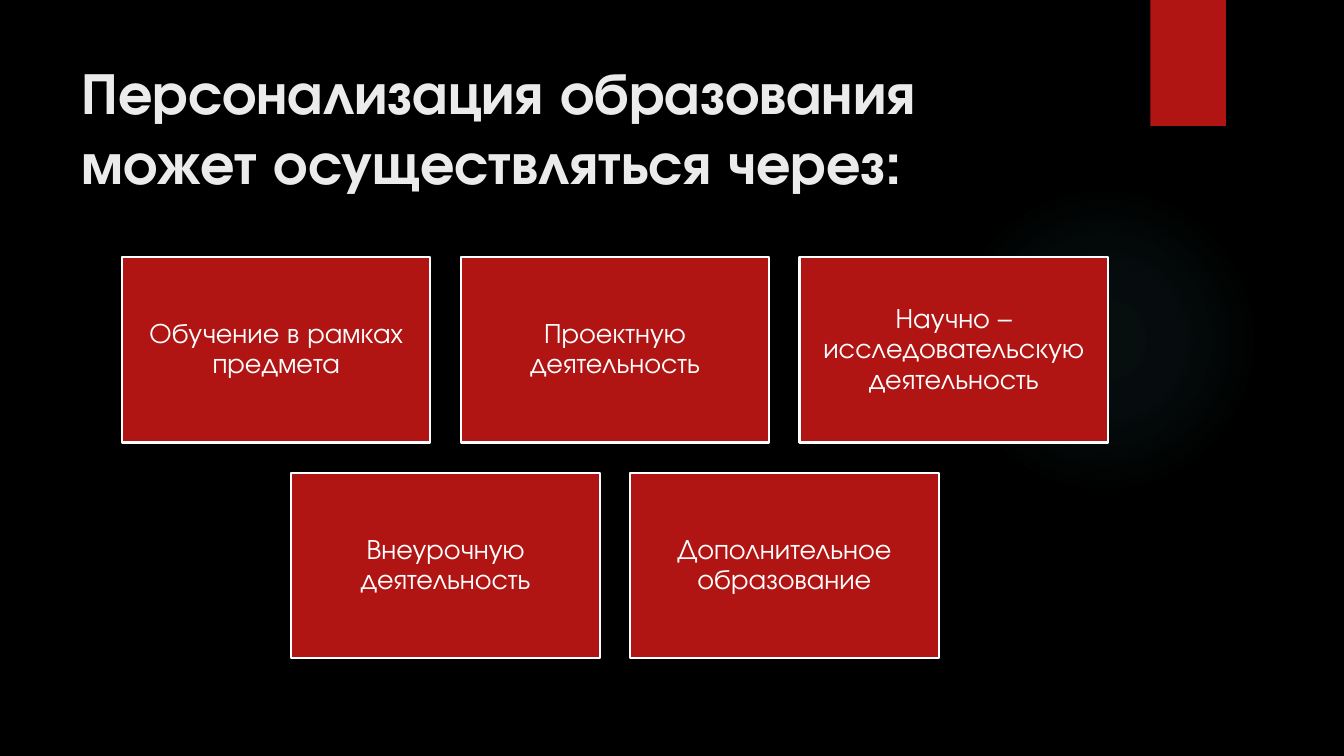
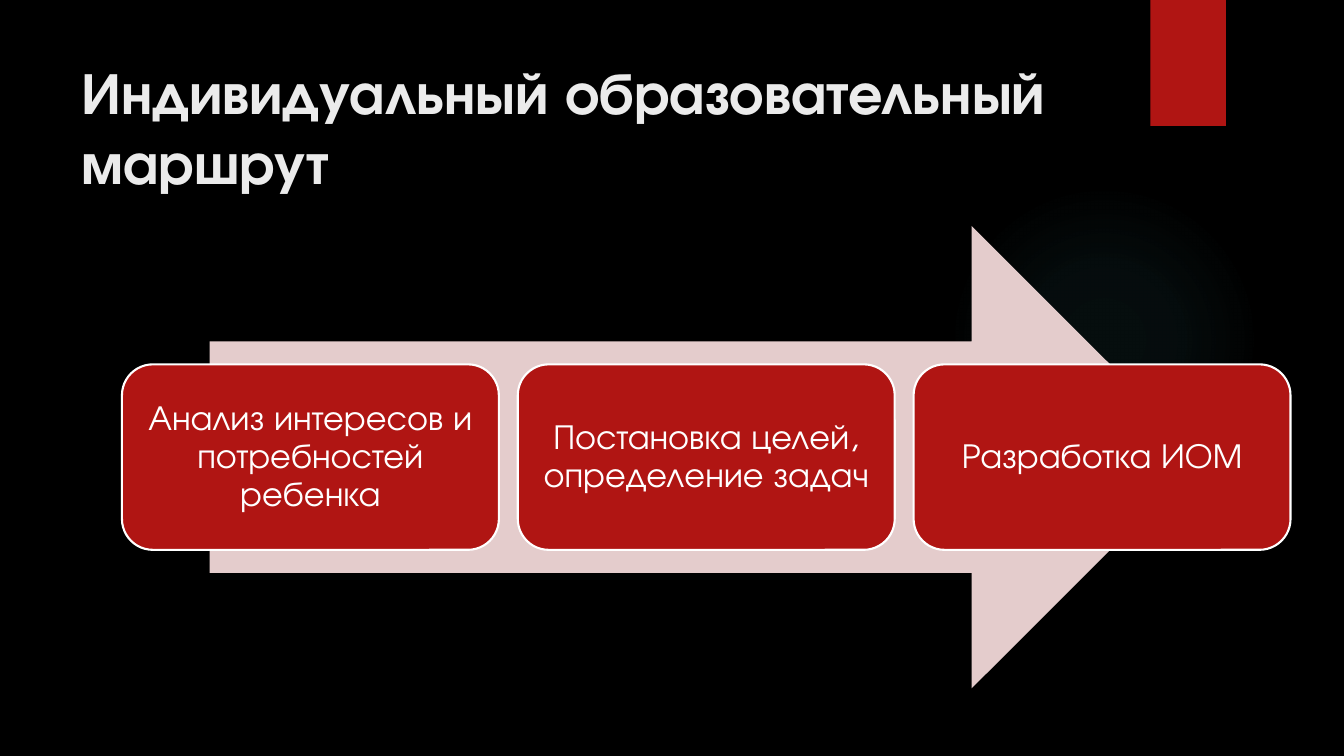
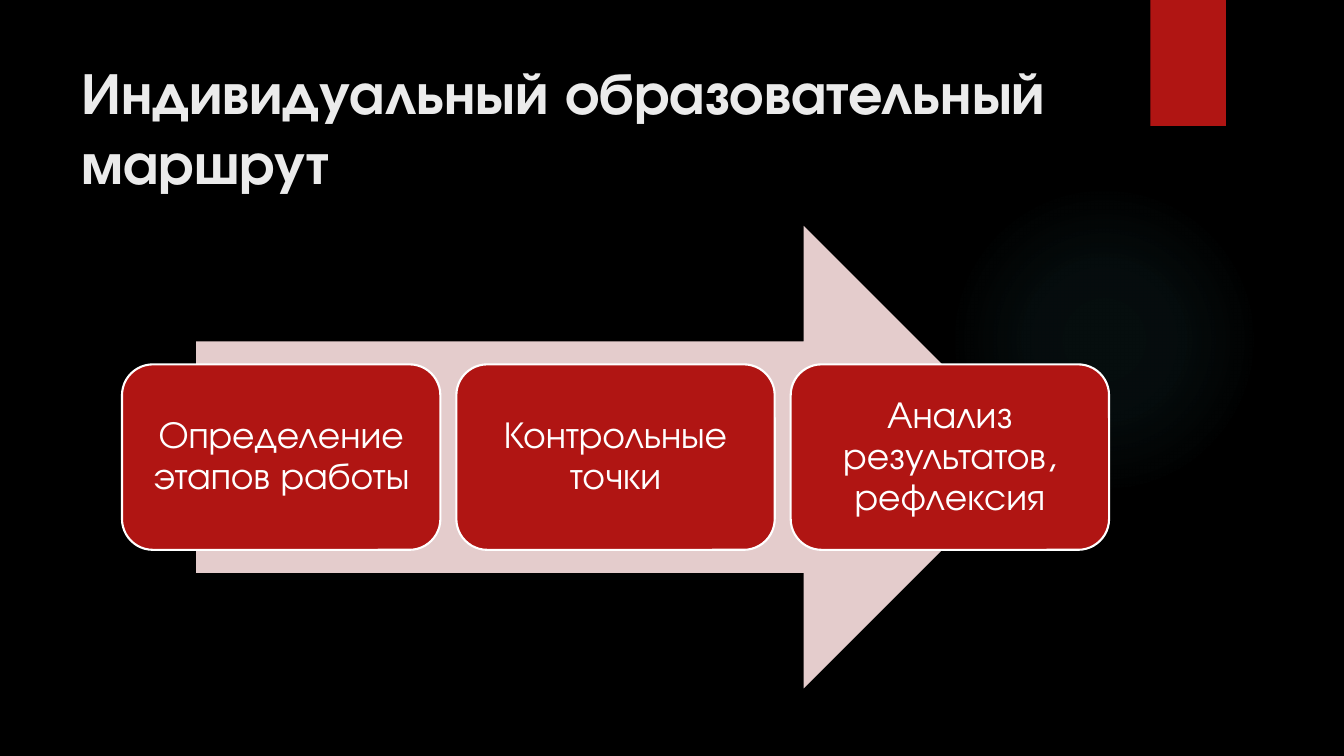
from pptx import Presentation
from pptx.dml.color import RGBColor
from pptx.enum.shapes import MSO_SHAPE
from pptx.enum.text import MSO_ANCHOR, PP_ALIGN
from pptx.oxml import parse_xml
from pptx.oxml.ns import nsdecls, qn
from pptx.util import Inches, Pt

BLACK = RGBColor(0x00, 0x00, 0x00)
RED = RGBColor(0xB0, 0x15, 0x13)
PINK = RGBColor(0xE4, 0xCC, 0xCC)
WHITE = RGBColor(0xFF, 0xFF, 0xFF)
TITLE_GREY = RGBColor(0xEB, 0xEB, 0xEB)
GLOW = RGBColor(0x50, 0xB9, 0xC1)
GLOW_STOPS = [(0, 7), (36, 6), (69, 0)]  # position and opacity, percent
FONT = "TeX Gyre Adventor"

ROUTE_TITLE = "Индивидуальный образовательный маршрут"
WAYS = {
    "title": "Персонализация образования может осуществляться через:",
    "rows": [
        ["Обучение в рамках предмета", "Проектную деятельность",
         "Научно – исследовательскую деятельность"],
        ["Внеурочную деятельность", "Дополнительное образование"],
    ],
}
ROUTES = [
    {"title": ROUTE_TITLE, "width": 11.59, "size": 25,
     "steps": ["Анализ интересов и потребностей ребенка",
               "Постановка целей, определение задач", "Разработка ИОМ"]},
    {"title": ROUTE_TITLE, "width": 9.79, "size": 27,
     "steps": ["Определение этапов работы", "Контрольные точки",
               "Анализ результатов, рефлексия"]},
]

LEFT = 1.21
GRID_TOP, GRID_WIDTH, GRID_GAP = 2.55, 9.78, 0.3
CARD_HEIGHT = 1.84
ARROW_TOP, ARROW_HEIGHT = 2.24, 4.59
ARROW_SHARE = 0.85  # of the diagram's width
STEP_GAP_SHARE = 0.05  # of a step's width


def add_figure(page, kind, left, top, width, height, color=None):
    figure = page.shapes.add_shape(
        kind, Inches(left), Inches(top), Inches(width), Inches(height))
    figure.shadow.inherit = False
    figure.line.fill.background()
    if color is None:
        figure.fill.background()
    else:
        figure.fill.solid()
        figure.fill.fore_color.rgb = color
    return figure


def write(para, text, size, color, bold=False):
    span = para.add_run()
    span.text = text
    span.font.name = FONT
    span.font.size = Pt(size)
    span.font.bold = bold
    span.font.color.rgb = color


def add_glow(page):
    glow = add_figure(page, MSO_SHAPE.OVAL, 9.41, 1.83, 3.08, 3.08)
    stops = "".join(
        f'<a:gs pos="{place * 1000}"><a:srgbClr val="{GLOW}">'
        f'<a:alpha val="{opacity * 1000}"/></a:srgbClr></a:gs>'
        for place, opacity in GLOW_STOPS)
    gradient = parse_xml(
        f'<a:gradFill {nsdecls("a")}><a:gsLst>{stops}</a:gsLst>'
        '<a:path path="circle"><a:fillToRect l="50000" t="50000" r="50000" b="50000"/>'
        '</a:path></a:gradFill>')
    properties = glow.element.spPr
    properties.replace(properties.find(qn("a:noFill")), gradient)


def add_page(deck, title):
    """Add a slide with the shared glow, red tab and title."""
    page = deck.slides.add_slide(deck.slide_layouts[6])
    add_glow(page)
    add_figure(page, MSO_SHAPE.RECTANGLE, 11.41, 0, 0.75, 1.25, RED)
    box = page.shapes.add_textbox(Inches(0.71), Inches(0.5), Inches(10.29), Inches(1.53))
    box.text_frame.word_wrap = True
    write(box.text_frame.paragraphs[0], title, 42, TITLE_GREY, bold=True)
    return page


def add_card(page, kind, left, top, width, text, size, margin):
    card = add_figure(page, kind, left, top, width, CARD_HEIGHT, RED)
    card.line.color.rgb = WHITE
    card.line.width = Pt(1.5)
    frame = card.text_frame
    frame.word_wrap = True
    frame.vertical_anchor = MSO_ANCHOR.MIDDLE
    frame.margin_left = frame.margin_right = Inches(margin)
    frame.margin_top = frame.margin_bottom = Inches(margin)
    para = frame.paragraphs[0]
    para.alignment = PP_ALIGN.CENTER
    para.line_spacing = 0.9
    write(para, text, size, WHITE)


def build_ways(deck):
    page = add_page(deck, WAYS["title"])
    columns = max(len(row) for row in WAYS["rows"])
    width = (GRID_WIDTH - (columns - 1) * GRID_GAP) / columns
    for row_index, row in enumerate(WAYS["rows"]):
        row_width = len(row) * (width + GRID_GAP) - GRID_GAP
        row_left = LEFT + (GRID_WIDTH - row_width) / 2
        top = GRID_TOP + row_index * (CARD_HEIGHT + GRID_GAP)
        for column, text in enumerate(row):
            add_card(page, MSO_SHAPE.RECTANGLE, row_left + column * (width + GRID_GAP),
                     top, width, text, 20, 0.08)


def build_route(deck, route):
    page = add_page(deck, route["title"])
    total, steps = route["width"], route["steps"]
    add_figure(page, MSO_SHAPE.RIGHT_ARROW, LEFT + total * (1 - ARROW_SHARE) / 2,
               ARROW_TOP, total * ARROW_SHARE, ARROW_HEIGHT, PINK)
    width = total / (len(steps) + (len(steps) - 1) * STEP_GAP_SHARE)
    top = ARROW_TOP + (ARROW_HEIGHT - CARD_HEIGHT) / 2
    for index, text in enumerate(steps):
        add_card(page, MSO_SHAPE.ROUNDED_RECTANGLE,
                 LEFT + index * width * (1 + STEP_GAP_SHARE), top, width,
                 text, route["size"], 0.1)


def main():
    deck = Presentation()
    deck.slide_width, deck.slide_height = Inches(13.33), Inches(7.5)
    backdrop = deck.slide_master.background.fill
    backdrop.solid()
    backdrop.fore_color.rgb = BLACK
    build_ways(deck)
    for route in ROUTES:
        build_route(deck, route)
    deck.save("out.pptx")


if __name__ == "__main__":
    main()
